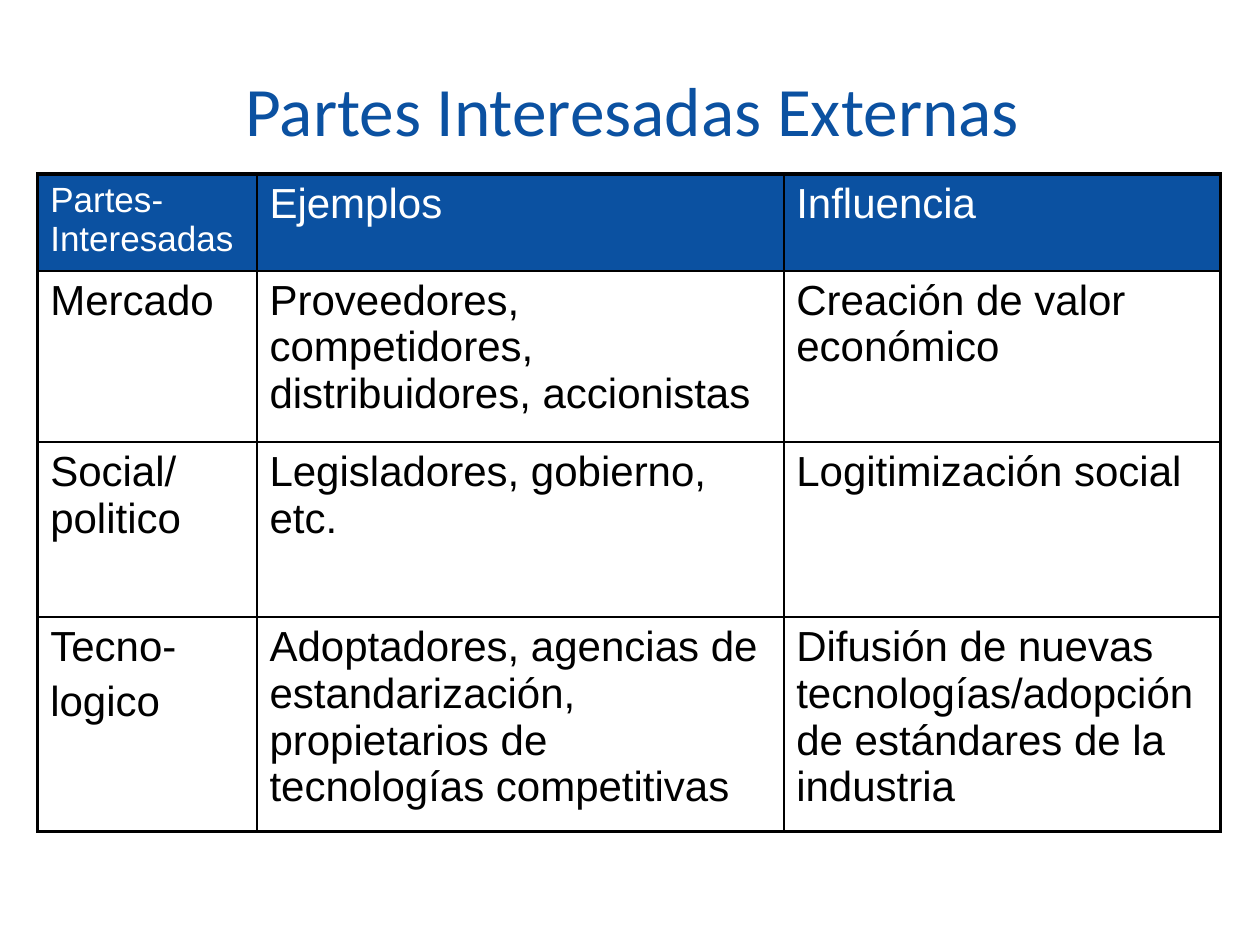
"""Builds a slide with a table of external stakeholders."""
from dataclasses import dataclass

from lxml.etree import SubElement
from pptx import Presentation
from pptx.dml.color import RGBColor
from pptx.enum.text import MSO_ANCHOR, PP_ALIGN
from pptx.oxml.ns import qn
from pptx.util import Cm, Pt


@dataclass(frozen=True)
class Theme:
    blue: str = "0B51A1"
    white: str = "FFFFFF"
    black: str = "000000"
    title_font: str = "Calibri"
    table_font: str = "Arial"
    title_size: float = 39.6
    body_size: float = 24
    small_size: float = 20
    paragraph_gap: float = 5
    outer_line: float = 2.25
    column_line: float = 1.5
    row_line: float = 1


def add_text(paragraph, text, font, size, color):
    for number, line in enumerate(text.split("\n")):
        if number:
            paragraph.add_line_break()
        run = paragraph.add_run()
        run.text = line
        run.font.name = font
        run.font.size = Pt(size)
        run.font.color.rgb = RGBColor.from_string(color)


def add_border(cell, side, width, color):
    line = SubElement(cell._tc.get_or_add_tcPr(), qn(f"a:ln{side}"), w=str(Pt(width)))
    SubElement(SubElement(line, qn("a:solidFill")), qn("a:srgbClr"), val=color)


theme = Theme()
column_widths = [4.42, 10.62, 8.81]
row_heights = [1.6, 3.45, 3.53, 3.96]
stakeholders = [
    [["Partes-\nInteresadas"], ["Ejemplos"], ["Influencia"]],
    [["Mercado"],
     ["Proveedores, competidores, distribuidores, accionistas"],
     ["Creación de valor económico"]],
    [["Social/\npolitico"], ["Legisladores, gobierno, etc."], ["Logitimización social"]],
    [["Tecno-", "logico"],
     ["Adoptadores, agencias de estandarización, propietarios de tecnologías competitivas"],
     ["Difusión de nuevas tecnologías/adopción de estándares de la industria"]],
]

presentation = Presentation()
presentation.slide_width = Cm(25.4)
presentation.slide_height = Cm(19.05)
slide = presentation.slides.add_slide(presentation.slide_layouts[6])

title = slide.shapes.add_textbox(Cm(1.32), Cm(1.3), Cm(22.86), Cm(1.8)).text_frame
title.word_wrap = True
title.vertical_anchor = MSO_ANCHOR.MIDDLE
title.paragraphs[0].alignment = PP_ALIGN.CENTER
add_text(title.paragraphs[0], "Partes Interesadas Externas",
         theme.title_font, theme.title_size, theme.blue)

table = slide.shapes.add_table(
    len(row_heights), len(column_widths), Cm(0.76), Cm(3.51),
    Cm(sum(column_widths)), Cm(sum(row_heights))).table
table.first_row = False
table.horz_banding = False
for column, width in zip(table.columns, column_widths):
    column.width = Cm(width)
for row, height in zip(table.rows, row_heights):
    row.height = Cm(height)

last_row = len(row_heights) - 1
last_column = len(column_widths) - 1
for r, stakeholder in enumerate(stakeholders):
    for c, paragraphs in enumerate(stakeholder):
        cell = table.cell(r, c)
        borders = {
            "L": theme.outer_line if c == 0 else theme.column_line,
            "R": theme.outer_line if c == last_column else theme.column_line,
            "T": theme.outer_line if r == 0 else theme.row_line,
            "B": theme.outer_line if r == last_row else theme.row_line,
        }
        for side, width in borders.items():
            add_border(cell, side, width, theme.black)
        if r == 0:
            cell.fill.solid()
            cell.fill.fore_color.rgb = RGBColor.from_string(theme.blue)
        else:
            cell.fill.background()
        size = theme.small_size if r == c == 0 else theme.body_size
        color = theme.white if r == 0 else theme.black
        for number, text in enumerate(paragraphs):
            frame = cell.text_frame
            paragraph = frame.add_paragraph() if number else frame.paragraphs[0]
            paragraph.space_before = Pt(theme.paragraph_gap if number else 0)
            add_text(paragraph, text, theme.table_font, size, color)

presentation.save("out.pptx")
